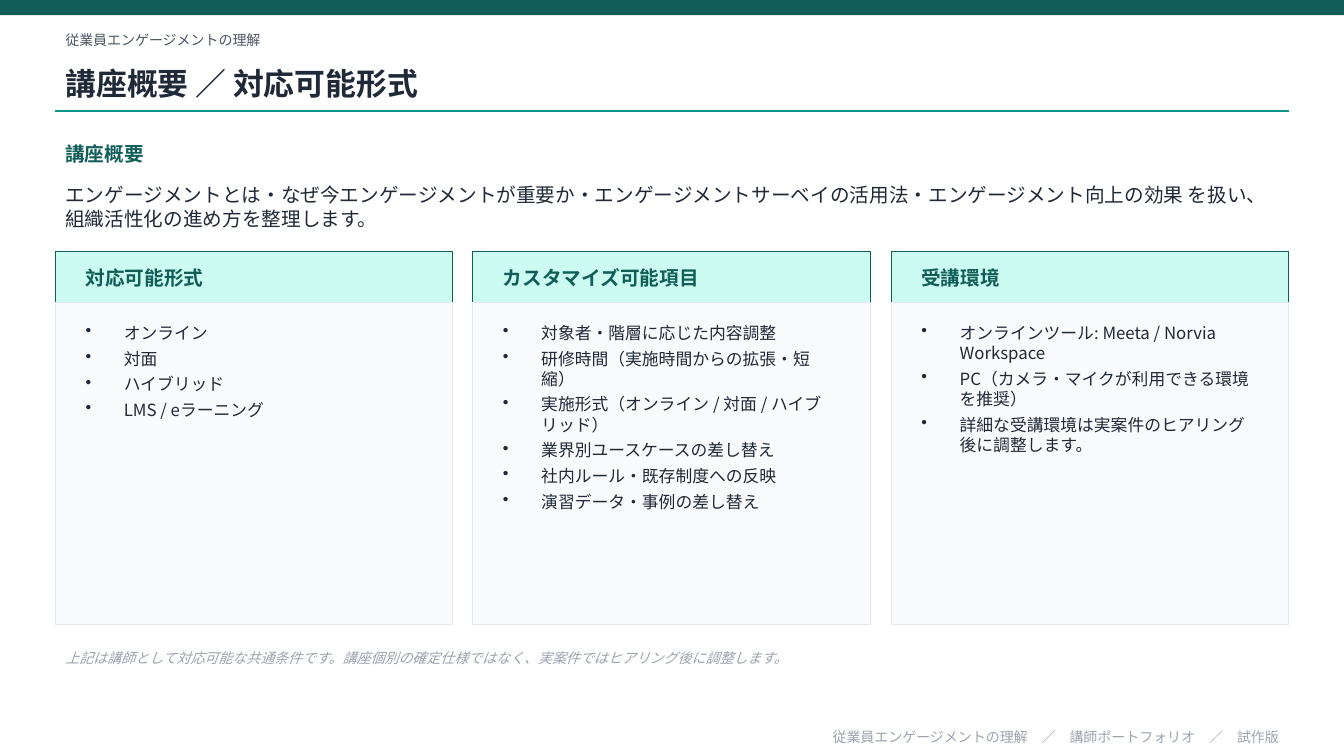
from lxml import etree
from pptx import Presentation
from pptx.dml.color import RGBColor
from pptx.enum.shapes import MSO_CONNECTOR, MSO_SHAPE
from pptx.enum.text import MSO_ANCHOR, PP_ALIGN
from pptx.oxml.ns import qn
from pptx.util import Pt

PX = 9144  # EMU per px, 100 px to the inch
FONT = "Noto Sans CJK JP"
DARK_TEAL = RGBColor(0x11, 0x5E, 0x59)
TEAL = RGBColor(0x0D, 0x94, 0x88)
MINT = RGBColor(0xCC, 0xFB, 0xF1)
PALE = RGBColor(0xF9, 0xFA, 0xFB)
BORDER = RGBColor(0xE5, 0xE7, 0xEB)
INK = RGBColor(0x1F, 0x29, 0x37)
SLATE = RGBColor(0x4B, 0x55, 0x63)
GRAY = RGBColor(0x9C, 0xA3, 0xAF)

SLIDE_WIDTH, SLIDE_HEIGHT = 1333, 750
MARGIN, CONTENT_WIDTH = 55, 1223
GAP, PADDING = 20, 20
HEADER_TOP, HEADER_HEIGHT, BODY_HEIGHT = 250, 50, 320
BODY_TOP = HEADER_TOP + HEADER_HEIGHT
BULLET_INDENT = 38

COLUMNS = [
    ("対応可能形式", ["オンライン", "対面", "ハイブリッド", "LMS / eラーニング"]),
    ("カスタマイズ可能項目", [
        "対象者・階層に応じた内容調整",
        "研修時間（実施時間からの拡張・短縮）",
        "実施形式（オンライン / 対面 / ハイブリッド）",
        "業界別ユースケースの差し替え",
        "社内ルール・既存制度への反映",
        "演習データ・事例の差し替え",
    ]),
    ("受講環境", [
        "オンラインツール: Meeta / Norvia Workspace",
        "PC（カメラ・マイクが利用できる環境を推奨）",
        "詳細な受講環境は実案件のヒアリング後に調整します。",
    ]),
]

deck = Presentation()
deck.slide_width, deck.slide_height = SLIDE_WIDTH * PX, SLIDE_HEIGHT * PX
page = deck.slides.add_slide(deck.slide_layouts[5])


def add_text(lines, left, top, width, height, size, color, bold=False, italic=False,
             align=PP_ALIGN.LEFT, bullets=False, box=None):
    """Write lines into the given placeholder, or into a new text box."""
    box = box or page.shapes.add_textbox(0, 0, 0, 0)
    box.left, box.top, box.width, box.height = (n * PX for n in (left, top, width, height))
    frame = box.text_frame
    frame.word_wrap = True
    frame.vertical_anchor = MSO_ANCHOR.TOP if bullets else MSO_ANCHOR.MIDDLE
    for index, line in enumerate(lines):
        para = frame.add_paragraph() if index else frame.paragraphs[0]
        para.alignment = align
        if bullets:
            para.space_after = Pt(4)
            properties = para._p.get_or_add_pPr()
            properties.set("marL", str(BULLET_INDENT * PX))
            properties.set("indent", str(-BULLET_INDENT * PX))
            etree.SubElement(properties, qn("a:buChar"), char="•")
        span = para.add_run()
        span.text = line
        span.font.name, span.font.size = FONT, Pt(size)
        span.font.bold, span.font.italic = bold, italic
        span.font.color.rgb = color
        # East Asian glyphs take their typeface from a separate element
        etree.SubElement(span._r.get_or_add_rPr(), qn("a:ea"), typeface=FONT)


def add_panel(left, top, width, height, fill, border=None):
    panel = page.shapes.add_shape(MSO_SHAPE.RECTANGLE, *(n * PX for n in (left, top, width, height)))
    panel.shadow.inherit = False
    panel.fill.solid()
    panel.fill.fore_color.rgb = fill
    if border is None:
        panel.line.fill.background()
    else:
        panel.line.color.rgb = border
        panel.line.width = Pt(0.75)


# Heading
add_panel(0, 0, SLIDE_WIDTH, 15, DARK_TEAL)
add_text(["従業員エンゲージメントの理解"], MARGIN, 25, CONTENT_WIDTH, 30, 10, SLATE)
add_text(["講座概要 ／ 対応可能形式"], MARGIN, 55, CONTENT_WIDTH, 55, 22, INK, bold=True,
         box=page.shapes.title)
rule = page.shapes.add_connector(MSO_CONNECTOR.STRAIGHT, MARGIN * PX, 110 * PX,
                                 (MARGIN + CONTENT_WIDTH) * PX, 110 * PX)
rule.line.color.rgb = TEAL
rule.line.width = Pt(1)
etree.SubElement(rule._element.spPr, qn("a:effectLst"))

# Overview
add_text(["講座概要"], MARGIN, 135, CONTENT_WIDTH, 35, 14, DARK_TEAL, bold=True)
add_text(["エンゲージメントとは・なぜ今エンゲージメントが重要か・エンゲージメントサーベイの活用法・"
          "エンゲージメント向上の効果 を扱い、組織活性化の進め方を整理します。"],
         MARGIN, 175, CONTENT_WIDTH, 60, 14, INK)

# Three equal columns
column_step = (CONTENT_WIDTH + GAP) / len(COLUMNS)
column_width = round(column_step - GAP)
text_width = column_width - 2 * PADDING
for index, (heading, items) in enumerate(COLUMNS):
    left = MARGIN + round(index * column_step)
    text_left, text_width = left + PADDING, column_width - 2 * PADDING
    add_panel(left, HEADER_TOP, column_width, HEADER_HEIGHT, MINT, DARK_TEAL)
    add_text([heading], text_left, HEADER_TOP, text_width, HEADER_HEIGHT, 14, DARK_TEAL, bold=True)
    add_panel(left, BODY_TOP, column_width, BODY_HEIGHT, PALE, BORDER)
    add_text(items, text_left, BODY_TOP + 15, text_width, BODY_HEIGHT - 35, 12, INK, bullets=True)

# Note and footer
add_text(["上記は講師として対応可能な共通条件です。講座個別の確定仕様ではなく、実案件ではヒアリング後に調整します。"],
         MARGIN, 635, CONTENT_WIDTH, 35, 10, GRAY, italic=True)
add_text(["従業員エンゲージメントの理解　／　講師ポートフォリオ　／　試作版"],
         MARGIN, 720, CONTENT_WIDTH, 22, 10, GRAY, align=PP_ALIGN.RIGHT)

deck.save("out.pptx")
